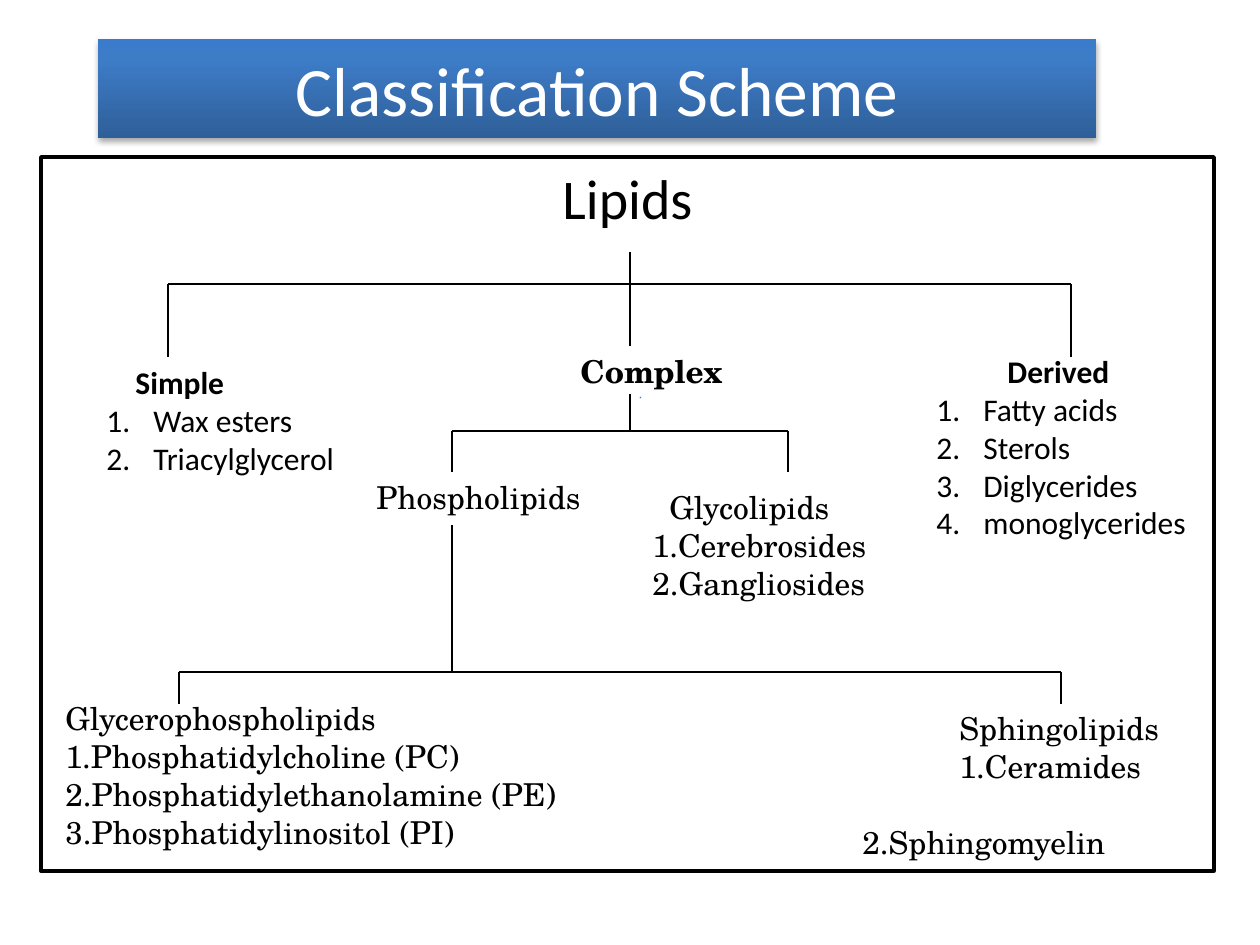
from typing import NamedTuple

from lxml.etree import SubElement
from pptx import Presentation
from pptx.dml.color import RGBColor
from pptx.enum.shapes import MSO_CONNECTOR
from pptx.enum.text import MSO_ANCHOR, MSO_AUTO_SIZE, PP_ALIGN
from pptx.oxml import parse_xml
from pptx.oxml.ns import nsdecls, qn
from pptx.util import Emu, Pt

PX_PER_INCH = 126
BLACK = RGBColor(0x00, 0x00, 0x00)
WHITE = RGBColor(0xFF, 0xFF, 0xFF)
TICK_BLUE = RGBColor(0x4B, 0x7E, 0xBC)
BANNER_STOPS = (
    (0, RGBColor(0x2F, 0x5F, 0x99)),
    (80, RGBColor(0x3D, 0x7C, 0xC7)),
    (100, RGBColor(0x3A, 0x7C, 0xCB)),
)
SANS = "Calibri"
SERIF = "TeX Gyre Schola"
LIST_INDENT = 47
SPHINGO_INDENT = 97


class Entry(NamedTuple):
    text: str
    indent: int = 0
    bold: bool = False
    numbered: bool = False
    space_before: float = 0


def px(length):
    return Emu(round(length * 914400 / PX_PER_INCH))


def place(shape, left, top, width, height):
    shape.left, shape.top = px(left), px(top)
    shape.width, shape.height = px(width), px(height)


def add_run(paragraph, text, size, font, color=BLACK, bold=False):
    run = paragraph.add_run()
    run.text = text
    run.font.size = Pt(size)
    run.font.name = font
    run.font.bold = bold
    run.font.color.rgb = color


def set_indent(paragraph, margin, first_line=0):
    properties = paragraph._p.get_or_add_pPr()
    properties.set("marL", str(px(margin)))
    properties.set("indent", str(px(first_line)))
    return properties


def style_banner(banner):
    """Give the title its vertical gradient and soft shadow."""
    stops = "".join(
        f'<a:gs pos="{position * 1000}"><a:srgbClr val="{color}"/></a:gs>'
        for position, color in BANNER_STOPS
    )
    properties = banner._element.spPr
    properties.append(parse_xml(
        f'<a:gradFill {nsdecls("a")} rotWithShape="1"><a:gsLst>{stops}</a:gsLst>'
        '<a:lin ang="16200000" scaled="0"/></a:gradFill>'))
    properties.append(parse_xml(
        f'<a:effectLst {nsdecls("a")}>'
        '<a:outerShdw blurRad="39370" dist="22860" dir="5400000" rotWithShape="0">'
        '<a:srgbClr val="000000"><a:alpha val="35000"/></a:srgbClr>'
        '</a:outerShdw></a:effectLst>'))


def fill_title(title, text):
    place(title, 98, 39, 998, 99)
    style_banner(title)
    frame = title.text_frame
    frame.auto_size = MSO_AUTO_SIZE.NONE
    frame.vertical_anchor = MSO_ANCHOR.MIDDLE
    paragraph = frame.paragraphs[0]
    paragraph.alignment = PP_ALIGN.CENTER
    add_run(paragraph, text, 39.6, SANS, WHITE)


def fill_root(body, text):
    """Turn the body into the framed panel headed by the tree's root."""
    place(body, 41, 157, 1173, 714)
    body.fill.solid()
    body.fill.fore_color.rgb = WHITE
    body.line.color.rgb = BLACK
    body.line.width = Pt(2)
    paragraph = body.text_frame.paragraphs[0]
    paragraph.alignment = PP_ALIGN.CENTER
    SubElement(set_indent(paragraph, 0), qn("a:buNone"))
    add_run(paragraph, text, 32, SANS)


def add_line(slide, x1, y1, x2, y2, color=BLACK):
    line = slide.shapes.add_connector(
        MSO_CONNECTOR.STRAIGHT, px(x1), px(y1), px(x2), px(y2))
    line.line.color.rgb = color
    line.line.width = Pt(0.75)
    SubElement(line._element.spPr, qn("a:effectLst"))


def add_branch(slide, stem, bar, drop_bottom):
    """Draw a stem (x, top, bottom), a bar (left, right, y) and its end drops."""
    stem_x, stem_top, stem_bottom = stem
    left, right, bar_y = bar
    add_line(slide, left, bar_y, right, bar_y)
    for child_x in (left, right):
        add_line(slide, child_x, bar_y, child_x, drop_bottom)
    add_line(slide, stem_x, stem_top, stem_x, stem_bottom)


def add_group(slide, box, font, entries, alignment=PP_ALIGN.LEFT):
    frame = slide.shapes.add_textbox(*map(px, box)).text_frame
    frame.word_wrap = True
    frame.auto_size = MSO_AUTO_SIZE.SHAPE_TO_FIT_TEXT
    for index, entry in enumerate(entries):
        paragraph = frame.add_paragraph() if index else frame.paragraphs[0]
        paragraph.alignment = alignment
        if entry.space_before:
            paragraph.space_before = Pt(entry.space_before)
        if entry.numbered:
            properties = set_indent(paragraph, LIST_INDENT, -LIST_INDENT)
            SubElement(properties, qn("a:buFont"), typeface="+mj-lt")
            SubElement(properties, qn("a:buAutoNum"), type="arabicPeriod")
        else:
            set_indent(paragraph, entry.indent)
        add_run(paragraph, entry.text, 18, font, bold=entry.bold)


def numbered_list(heading, indent, items):
    return [Entry(heading, indent, bold=True),
            *(Entry(item, numbered=True) for item in items)]


def main():
    presentation = Presentation()
    presentation.slide_width, presentation.slide_height = px(1260), px(945)
    slide = presentation.slides.add_slide(presentation.slide_layouts[1])
    fill_title(slide.shapes.title, "Classification Scheme")
    fill_root(slide.placeholders[1], "Lipids")

    add_branch(slide, (630, 252, 346), (168, 1071, 284), 357)
    add_group(slide, (94, 357, 294, 127), SANS,
              numbered_list("Simple", 29, ["Wax esters", "Triacylglycerol"]))
    add_group(slide, (546, 346, 189, 50), SERIF,
              [Entry("Complex", bold=True)], PP_ALIGN.RIGHT)
    add_group(slide, (924, 346, 336, 204), SANS, numbered_list(
        "Derived", 71,
        ["Fatty acids", "Sterols", "Diglycerides", "monoglycerides"]))

    add_line(slide, 641, 397, 640, 398, TICK_BLUE)
    add_branch(slide, (630, 394, 431), (452, 788, 431), 472)
    add_group(slide, (364, 472, 242, 50), SERIF, [Entry("Phospholipids")])
    add_group(slide, (640, 482, 294, 127), SERIF, [
        Entry("Glycolipids", 17),
        Entry("1.Cerebrosides"),
        Entry("2.Gangliosides"),
    ])

    add_branch(slide, (452, 525, 672), (179, 1061, 672), 704)
    add_group(slide, (53, 693, 546, 165), SERIF, [
        Entry("Glycerophospholipids"),
        Entry("1.Phosphatidylcholine (PC)"),
        Entry("2.Phosphatidylethanolamine (PE)"),
        Entry("3.Phosphatidylinositol (PI)"),
    ])
    add_group(slide, (850, 703, 346, 127), SERIF, [
        Entry("Sphingolipids", SPHINGO_INDENT),
        Entry("1.Ceramides", SPHINGO_INDENT),
        Entry("2.Sphingomyelin", space_before=21.6),
    ])
    presentation.save("out.pptx")


if __name__ == "__main__":
    main()
